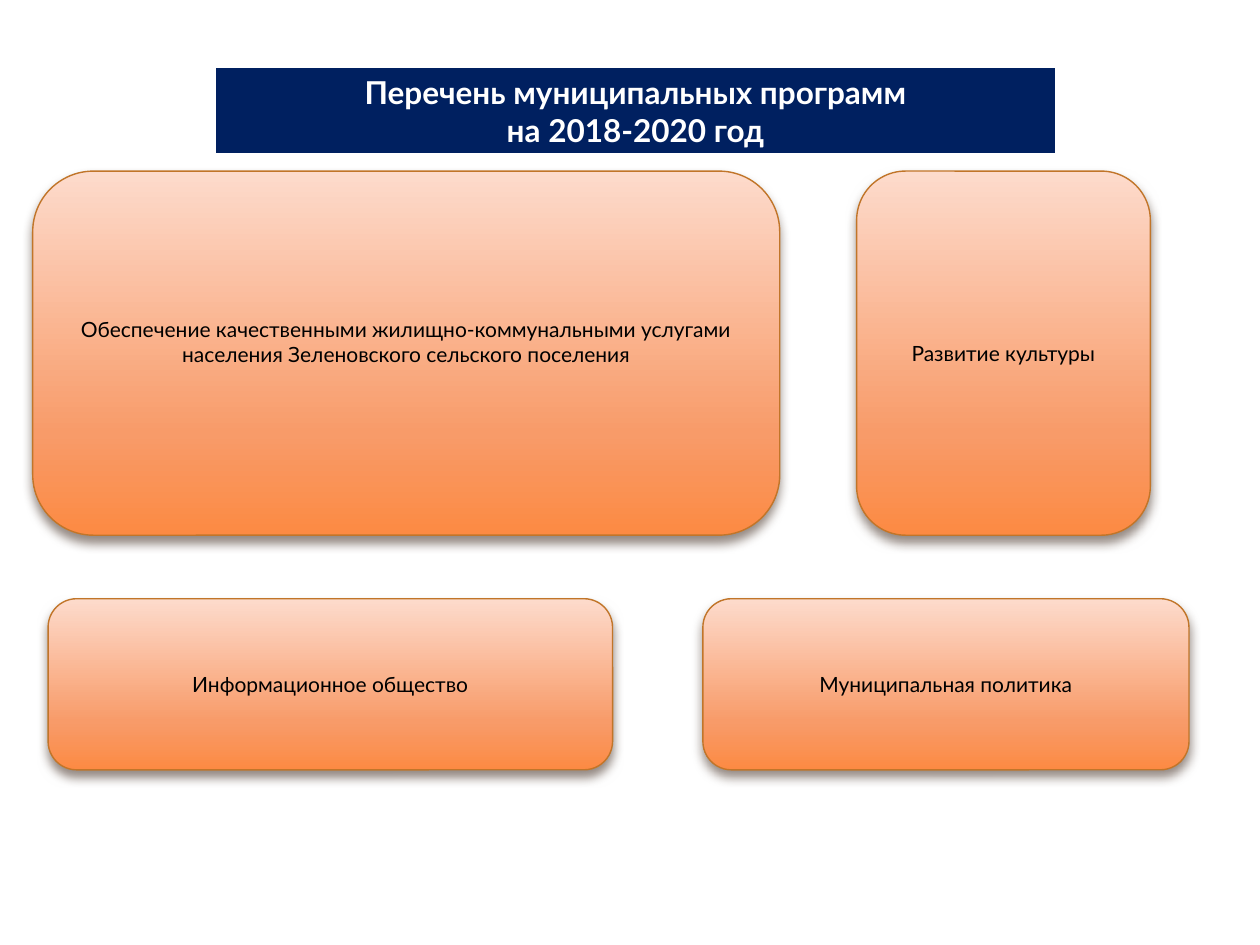
"""Builds the slide listing the municipal programmes for 2018-2020."""
from pptx import Presentation
from pptx.dml.color import RGBColor
from pptx.enum import shapes, text
from pptx.oxml import parse_xml
from pptx.util import Cm, Pt

TITLE = ["Перечень муниципальных программ", "на 2018-2020 год"]
TITLE_BOX = (4.34, 1.35, 16.94, 1.78)
ROWS = [
    {"top": 3.45, "height": 7.34, "cards": [
        ("Обеспечение качественными жилищно-коммунальными услугами "
         "населения Зеленовского сельского поселения", 0.66, 15.06, 0.6),
        ("Развитие культуры", 17.27, 5.92, 0.13)]},
    {"top": 12.07, "height": 3.45, "cards": [
        ("Информационное общество", 0.97, 11.38, 0.13),
        ("Муниципальная политика", 14.17, 9.8, 0.13)]},
]
COLORS = {"title": "002060", "white": "FFFFFF", "black": "000000",
          "outline": "C17529", "shadow": "4E3B30"}
GRADIENT = [(0, "FDDBCC"), (72, "F89B69"), (100, "FC8A43")]
BORDERS = {"lnL": 1, "lnR": 1, "lnT": 1, "lnB": 3}
FONT = "Lato"
NS = 'xmlns:a="http://schemas.openxmlformats.org/drawingml/2006/main"'


def rgb(name):
    return RGBColor.from_string(COLORS[name])


def write(tf, lines, size, color, bold=False):
    tf.word_wrap = True
    for i, line in enumerate(lines):
        p = tf.add_paragraph() if i else tf.paragraphs[0]
        p.text = line
        p.alignment = text.PP_ALIGN.CENTER
        p.font.name, p.font.size, p.font.bold = FONT, Pt(size), bold
        p.font.color.rgb = rgb(color)


def add_title(s):
    table = s.shapes.add_table(1, 1, *map(Cm, TITLE_BOX)).table
    cell = table.cell(0, 0)
    cell.fill.solid()
    cell.fill.fore_color.rgb = rgb("title")
    write(cell.text_frame, TITLE, 18, "white", True)
    tc_pr = cell._tc.get_or_add_tcPr()
    for i, (tag, width) in enumerate(BORDERS.items()):
        tc_pr.insert(i, parse_xml(
            f'<a:{tag} {NS} w="{Pt(width)}"><a:solidFill>'
            f'<a:srgbClr val="{COLORS["white"]}"/></a:solidFill></a:{tag}>'))


def add_card(s, label, left, top, width, height, bottom):
    sp = s.shapes.add_shape(shapes.MSO_SHAPE.ROUNDED_RECTANGLE,
                            *map(Cm, (left, top, width, height)))
    sp.line.color.rgb = rgb("outline")
    sp.line.width = Pt(0.79)
    stops = "".join(f'<a:gs pos="{pos * 1000}"><a:srgbClr val="{color}"/></a:gs>'
                    for pos, color in GRADIENT)
    sp_pr = sp._element.spPr
    sp_pr.insert(2, parse_xml(
        f'<a:gradFill {NS} rotWithShape="1"><a:gsLst>{stops}</a:gsLst>'
        '<a:lin ang="5400000" scaled="0"/></a:gradFill>'))
    sp_pr.append(parse_xml(
        f'<a:effectLst {NS}><a:outerShdw blurRad="{Pt(6)}" dist="{Pt(4)}" '
        f'dir="5400000" rotWithShape="0"><a:srgbClr val="{COLORS["shadow"]}">'
        '<a:alpha val="60000"/></a:srgbClr></a:outerShdw></a:effectLst>'))
    tf = sp.text_frame
    tf.vertical_anchor = text.MSO_ANCHOR.MIDDLE
    tf.margin_bottom = Cm(bottom)
    write(tf, [label], 12, "black")


def main():
    prs = Presentation()
    prs.slide_width, prs.slide_height = Cm(25.4), Cm(19.05)
    s = prs.slides.add_slide(prs.slide_layouts[6])
    add_title(s)
    for row in ROWS:
        for label, left, width, bottom in row["cards"]:
            add_card(s, label, left, row["top"], width, row["height"], bottom)
    prs.save("out.pptx")


if __name__ == "__main__":
    main()
